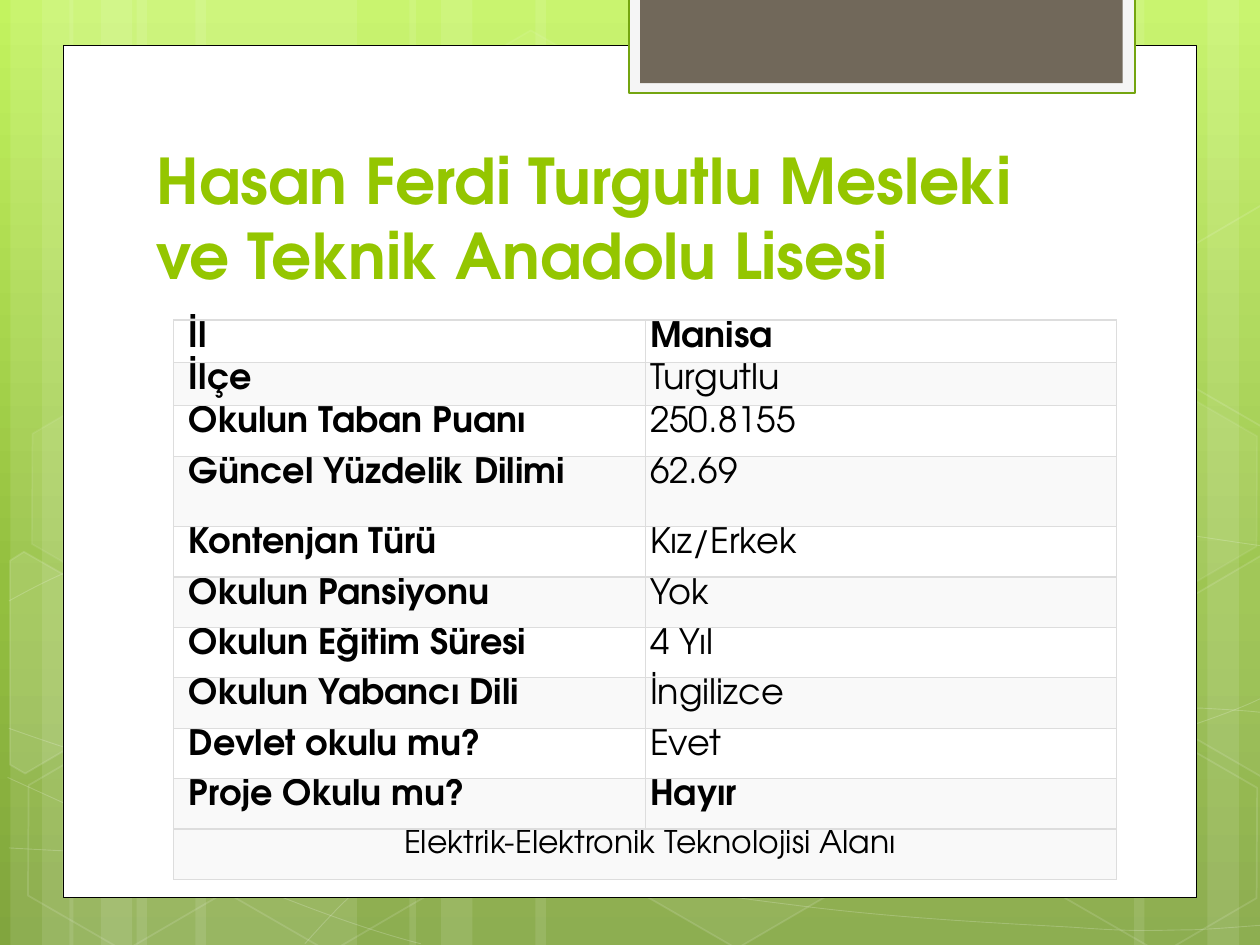
"""Build a school information slide with a green patterned backdrop and a table."""
import copy
import dataclasses
import typing

import lxml.etree
import pptx
import pptx.dml.color
import pptx.enum.shapes
import pptx.enum.text
import pptx.oxml.ns
import pptx.util

Point = typing.Tuple[float, float]
SHAPE = pptx.enum.shapes.MSO_SHAPE
ALIGN = pptx.enum.text.PP_ALIGN
ANCHOR = pptx.enum.text.MSO_ANCHOR
GRID_COLUMNS, GRID_ROWS = 10, 7.5
CELL = pptx.util.Inches(1)


@dataclasses.dataclass(frozen=True)
class Theme:
    font: str = "TeX Gyre Adventor"
    title_size: int = 36
    table_size: int = 20
    footer_size: int = 18
    accent: str = "94C600"
    ink: str = "000000"
    white: str = "FFFFFF"
    band: str = "F9F9F9"
    border: str = "DDDDDD"
    tab: str = "F5F5F5"
    tab_line: str = "74A510"
    tab_inner: str = "71685A"
    gradient: tuple = ((0, "C3F35F"), (0.62, "93BF3F"), (1, "81A53E"))


@dataclasses.dataclass(frozen=True)
class Box:
    left: float
    top: float
    width: float
    height: float

    def lengths(self) -> list:
        return [span(value) for value in dataclasses.astuple(self)]


@dataclasses.dataclass(frozen=True)
class Paint:
    fill: typing.Optional[str] = None
    fill_alpha: int = 100
    line: typing.Optional[str] = None
    line_width: float = 1
    line_alpha: int = 100


@dataclasses.dataclass(frozen=True)
class Hexagon:
    left: float
    top: float
    fill_alpha: int
    line_alpha: int


@dataclasses.dataclass(frozen=True)
class Polygon:
    points: typing.Tuple[Point, ...]
    fill_alpha: int


THEME = Theme()
STRIPE_TWELFTHS = ((13, 21), (1, 6), (4, 10), (18.6, 21), (6.6, 6), (9.6, 10), (88, 21),
                   (115, 6), (108, 10), (51, 37), (39, 6), (42, 10))
CURVES = (
    ((0.07, 6.73), (0.61, 6.76), (1.15, 6.79), (1.9, 6.78), (2.65, 6.77), (3.58, 6.75),
     (4.58, 6.65), (5.58, 6.55), (7, 6.36), (7.92, 6.17), (8.83, 5.98), (9.77, 5.68), (10.07, 5.51)),
    ((0.07, 4.77), (0.36, 4.61), (0.65, 4.46), (1.21, 4.31), (1.78, 4.16), (2.59, 3.94),
     (3.47, 3.87), (4.36, 3.8), (5.44, 3.79), (6.54, 3.87), (7.64, 3.95), (9.47, 4.26), (10.07, 4.34)),
    ((0.06, 6.17), (1.27, 6.72), (2.47, 7.27), (3.34, 7.49)),
    ((0.07, 5.78), (0.38, 5.89), (0.7, 6), (1.28, 6.16), (1.86, 6.31), (2.73, 6.56),
     (3.57, 6.73), (4.4, 6.9), (5.45, 7.08), (6.28, 7.18), (7.11, 7.29), (8, 7.33),
     (8.53, 7.36), (9.05, 7.4), (9.19, 7.38), (9.45, 7.38), (9.71, 7.37), (9.89, 7.35), (10.07, 7.34)),
    ((2.42, 7.49), (2.6, 7.29), (2.78, 7.09), (3.02, 6.91), (3.26, 6.73), (3.6, 6.53),
     (3.88, 6.39), (4.16, 6.25), (4.33, 6.19), (4.7, 6.09), (5.06, 5.99), (5.73, 5.85),
     (6.08, 5.78), (6.44, 5.71), (6.49, 5.71), (6.8, 5.69), (7.11, 5.66), (7.6, 5.63),
     (7.94, 5.62), (8.29, 5.61), (8.86, 5.62), (8.86, 5.62), (9.08, 5.62), (9.31, 5.62),
     (9.53, 5.62), (9.71, 5.63), (9.88, 5.64), (9.97, 5.65), (10.06, 5.66), (10.03, 5.65), (10.06, 5.66)),
)
HEXAGONS = (Hexagon(3.34, 0.36, 4, 8), Hexagon(4.97, 5.89, 6, 12), Hexagon(0.11, 5.91, 0, 12),
            Hexagon(0.14, 3.12, 7, 8), Hexagon(1.74, 5.92, 0, 12), Hexagon(7.53, 4.53, 10, 12),
            Hexagon(8.34, 5.93, 0, 12), Hexagon(8.34, 3.14, 7, 8))
POLYGONS = (
    Polygon(((0.08, 4.45), (0.19, 4.38), (0.96, 4.82), (0.95, 5.7), (0.2, 6.14), (0.08, 6.07)), 10),
    Polygon(((9.26, 4.85), (10.01, 4.41), (10.09, 4.46), (10.09, 6.13), (10.02, 6.17), (9.26, 5.73)), 4),
    Polygon(((9.26, 2.07), (10.01, 1.63), (10.1, 1.68), (10.09, 3.35), (10.02, 3.39), (9.26, 2.95)), 0),
)
PANELS = (
    (Box(0.5, 0.36, 9, 6.76), Paint(THEME.white, line=THEME.ink, line_width=0.5)),
    (Box(4.99, -0.02, 4.02, 0.76), Paint(THEME.tab, line=THEME.tab_line, line_width=1.25)),
    (Box(5.08, -0.02, 3.83, 0.68), Paint(THEME.tab_inner)),
)
TITLE = "Hasan Ferdi Turgutlu Mesleki ve Teknik Anadolu Lisesi"
FACTS = (("İl", "Manisa"), ("İlçe", "Turgutlu"), ("Okulun Taban Puanı", "250.8155"),
         ("Güncel Yüzdelik Dilimi", "62.69"), ("Kontenjan Türü", "Kız/Erkek"),
         ("Okulun Pansiyonu", "Yok"), ("Okulun Eğitim Süresi", "4 Yıl"),
         ("Okulun Yabancı Dili", "İngilizce"), ("Devlet okulu mu?", "Evet"),
         ("Proje Okulu mu?", "Hayır"))
BOLD_VALUES = ("Manisa", "Hayır")
FOOTER = "Elektrik-Elektronik Teknolojisi Alanı"
ROW_HEIGHTS = (0.34, 0.34, 0.4, 0.56) + (0.4,) * 7


def span(cells: float) -> int:
    return pptx.util.Emu(round(cells * CELL))


def color(value: str) -> pptx.dml.color.RGBColor:
    return pptx.dml.color.RGBColor.from_string(value)


def add_child(parent, tag: str, **attributes: str):
    return lxml.etree.SubElement(parent, pptx.oxml.ns.qn(tag), **attributes)


def set_alpha(shape, query: str, percent: int) -> None:
    if percent < 100:
        for element in shape.element.xpath(query):
            add_child(element, "a:alpha", val=str(percent * 1000))


def apply_paint(shape, paint: Paint) -> None:
    shape.shadow.inherit = False
    if paint.fill and paint.fill_alpha:
        shape.fill.solid()
        shape.fill.fore_color.rgb = color(paint.fill)
        set_alpha(shape, "./p:spPr/a:solidFill/a:srgbClr", paint.fill_alpha)
    else:
        shape.fill.background()
    if paint.line:
        shape.line.color.rgb = color(paint.line)
        shape.line.width = pptx.util.Pt(paint.line_width)
        set_alpha(shape, "./p:spPr/a:ln/a:solidFill/a:srgbClr", paint.line_alpha)
    else:
        shape.line.fill.background()


def add_box(slide, box: Box, paint: Paint, kind=SHAPE.RECTANGLE):
    shape = slide.shapes.add_shape(kind, *box.lengths())
    apply_paint(shape, paint)
    return shape


def add_outline(slide, points: typing.Sequence[Point], paint: Paint, closed: bool):
    start, *others = [(span(x), span(y)) for x, y in points]
    builder = slide.shapes.build_freeform(*start)
    builder.add_line_segments(others, close=closed)
    shape = builder.convert_to_shape()
    apply_paint(shape, paint)
    return shape


def add_curve(slide, controls: typing.Sequence[Point], paint: Paint) -> None:
    shape = add_outline(slide, controls, paint, False)
    outline = shape.element.xpath(".//a:path")[0]
    segments = outline.xpath("./a:lnTo")
    for first in range(0, len(segments), 3):
        curve = add_child(outline, "a:cubicBezTo")
        for segment in segments[first:first + 3]:
            curve.append(segment[0])
            outline.remove(segment)


def write_text(frame, text: str, *, size: int, ink: str = THEME.ink, bold: bool = False,
               align=ALIGN.LEFT) -> None:
    paragraph = frame.paragraphs[0]
    paragraph.alignment = align
    run = paragraph.add_run()
    run.text = text
    run.font.name, run.font.size, run.font.bold = THEME.font, pptx.util.Pt(size), bold
    run.font.color.rgb = color(ink)


def style_cell(cell, fill: str, left_margin: float) -> None:
    cell.margin_left, cell.margin_right = span(left_margin), span(0.04)
    cell.margin_top, cell.margin_bottom = span(0.01), 0
    cell.fill.solid()
    cell.fill.fore_color.rgb = color(fill)
    properties = cell._tc.get_or_add_tcPr()
    for index, side in enumerate(("a:lnL", "a:lnR", "a:lnT", "a:lnB")):
        border = add_child(properties, side, w=str(pptx.util.Pt(0.75)))
        add_child(add_child(border, "a:solidFill"), "a:srgbClr", val=THEME.border)
        properties.insert(index, border)


def add_backdrop(slide) -> None:
    fill = slide.background.fill
    fill.gradient()
    fill.gradient_angle = 270
    stop_list = slide.element.xpath(".//p:bg//a:gsLst")[0]
    stop_list.append(copy.deepcopy(stop_list[-1]))
    for stop, (position, value) in zip(fill.gradient_stops, THEME.gradient):
        stop.position, stop.color.rgb = position, color(value)
    for left, width in STRIPE_TWELFTHS:
        add_box(slide, Box(left / 12, 0, width / 12, GRID_ROWS), Paint(THEME.white, 10))
    for controls in CURVES:
        add_curve(slide, controls, Paint(line=THEME.white, line_width=0.5, line_alpha=20))
    for item in HEXAGONS:
        paint = Paint(THEME.white, item.fill_alpha, THEME.white, 1, item.line_alpha)
        hexagon = add_box(slide, Box(item.left, item.top, 1.75, 1.52), paint, SHAPE.HEXAGON)
        hexagon.adjustments[0], hexagon.adjustments[1] = 0.285, 1.155
        hexagon.rotation = 30
    for item in POLYGONS:
        add_outline(slide, item.points, Paint(THEME.white, item.fill_alpha, THEME.white, 1, 12), True)
    for box, paint in PANELS:
        add_box(slide, box, paint)


def add_title(slide) -> None:
    title = slide.shapes.title
    title.left, title.top, title.width, title.height = Box(1.14, 1.12, 7.68, 1.25).lengths()
    title.element.getparent().append(title.element)
    frame = title.text_frame
    frame.word_wrap, frame.vertical_anchor = True, ANCHOR.BOTTOM
    frame.auto_size = pptx.enum.text.MSO_AUTO_SIZE.NONE
    write_text(frame, TITLE, size=THEME.title_size, ink=THEME.accent, bold=True)


def add_facts(slide) -> None:
    box = Box(1.38, 2.54, 7.48, sum(ROW_HEIGHTS))
    table = slide.shapes.add_table(len(ROW_HEIGHTS), 2, *box.lengths()).table
    table.first_row = table.horz_banding = False
    for index, height in enumerate(ROW_HEIGHTS):
        table.rows[index].height = span(height)
        fill = THEME.band if index % 2 or index == len(FACTS) else THEME.white
        for column, left_margin in enumerate((0.12, 0.04)):
            style_cell(table.cell(index, column), fill, left_margin)
    for index, fact in enumerate(FACTS):
        for column, text in enumerate(fact):
            write_text(table.cell(index, column).text_frame, text, size=THEME.table_size,
                       bold=column == 0 or text in BOLD_VALUES)
    footer = table.cell(len(FACTS), 0)
    footer.merge(table.cell(len(FACTS), 1))
    write_text(footer.text_frame, FOOTER, size=THEME.footer_size, align=ALIGN.CENTER)


def main() -> None:
    presentation = pptx.Presentation()
    presentation.slide_width, presentation.slide_height = span(GRID_COLUMNS), span(GRID_ROWS)
    slide = presentation.slides.add_slide(presentation.slide_layouts[5])
    add_backdrop(slide)
    add_title(slide)
    add_facts(slide)
    presentation.save("out.pptx")


if __name__ == "__main__":
    main()
